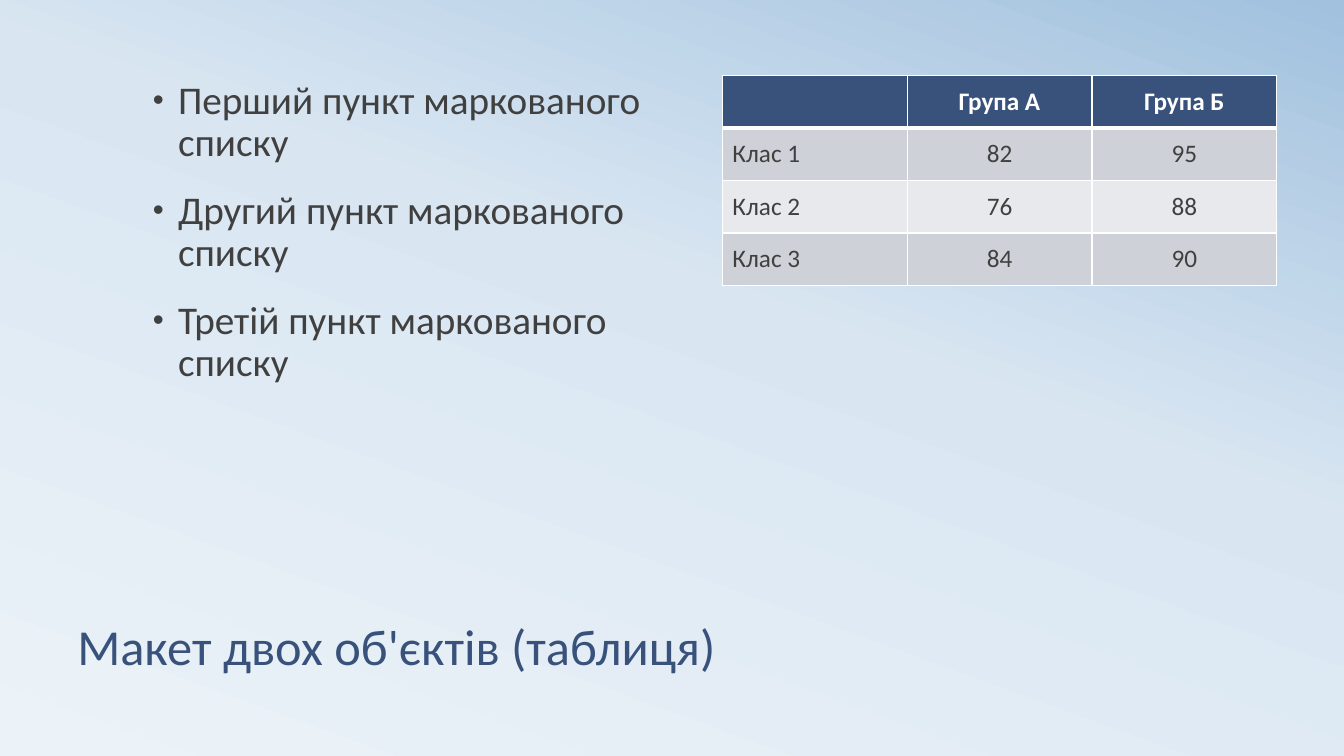
"""Build a slide with a bulleted list, a score table and a title at the bottom."""
from copy import deepcopy
from dataclasses import dataclass
from typing import Any

from lxml.etree import SubElement
from pptx import Presentation
from pptx.dml.color import RGBColor
from pptx.enum.text import MSO_ANCHOR, MSO_AUTO_SIZE, PP_ALIGN
from pptx.oxml.ns import qn
from pptx.util import Emu, Inches, Pt

CELL = Inches(1) // 12
COLUMNS, ROWS = 160, 90


@dataclass(frozen=True)
class Theme:
    font: str = "Calibri"
    accent: str = "39527B"
    ink: str = "404040"
    white: str = "FFFFFF"
    bands: tuple = ("CED1D7", "E8E9EC")
    backdrop: tuple = ((0, "ECF3F8"), (0.58, "D9E6F2"), (1, "A1C1DE"))
    backdrop_angle: int = 70
    title_size: int = 36
    list_size: int = 28
    table_size: int = 18


@dataclass(frozen=True)
class Area:
    column: int
    row: int
    columns: int
    rows: int

    def box(self) -> dict[str, Emu]:
        return {
            "left": Emu(self.column * CELL),
            "top": Emu(self.row * CELL),
            "width": Emu(self.columns * CELL),
            "height": Emu(self.rows * CELL),
        }


THEME = Theme()
TITLE_AREA = Area(8, 67, 144, 14)
LIST_AREA = Area(17, 9, 66, 55)
TABLE_AREA = Area(86, 9, 66, 25)
TITLE = "Макет двох об'єктів (таблиця)"
POINTS = [f"{order} пункт маркованого списку" for order in ("Перший", "Другий", "Третій")]
SCORES = [
    ("", "Група А", "Група Б"),
    ("Клас 1", "82", "95"),
    ("Клас 2", "76", "88"),
    ("Клас 3", "84", "90"),
]


def apply(target: Any, formats: dict[str, Any]) -> None:
    for attribute, value in formats.items():
        setattr(target, attribute, value)


def style_font(font: Any, size: int, color: str, bold: bool = False) -> None:
    apply(font, {"name": THEME.font, "size": Pt(size), "bold": bold})
    font.color.rgb = RGBColor.from_string(color)


def paint_backdrop(slide: Any) -> None:
    fill = slide.background.fill
    fill.gradient()
    fill.gradient_angle = THEME.backdrop_angle
    stop_list = slide.background._cSld.find(".//" + qn("a:gsLst"))
    stop_list.append(deepcopy(stop_list[-1]))
    for stop, (position, color) in zip(fill.gradient_stops, THEME.backdrop):
        stop.color.rgb = RGBColor.from_string(color)
        stop.position = position


def add_bullet(paragraph: Any) -> None:
    properties = paragraph._p.get_or_add_pPr()
    properties.set("marL", str(Inches(0.25)))
    properties.set("indent", str(-Inches(0.25)))
    bullet_color = SubElement(properties, qn("a:buClr"))
    SubElement(bullet_color, qn("a:srgbClr"), val=THEME.ink)
    SubElement(properties, qn("a:buSzPct"), val="80000")
    SubElement(properties, qn("a:buFont"), typeface="Arial")
    SubElement(properties, qn("a:buChar"), char="•")


def fill_placeholder(placeholder: Any, area: Area, lines: list[str], anchor: MSO_ANCHOR,
                     paragraph_format: dict[str, Any], size: int, color: str) -> None:
    apply(placeholder, area.box())
    frame = placeholder.text_frame
    frame.text = "\n".join(lines)
    apply(frame, {"word_wrap": True, "auto_size": MSO_AUTO_SIZE.NONE, "vertical_anchor": anchor})
    for paragraph in frame.paragraphs:
        apply(paragraph, {"alignment": PP_ALIGN.LEFT, **paragraph_format})
        style_font(paragraph.runs[0].font, size, color)


def add_borders(cell: Any, bottom_width: float) -> None:
    properties = cell._tc.get_or_add_tcPr()
    widths = {"L": 1, "R": 1, "T": 1, "B": bottom_width}
    for side, width in widths.items():
        border = SubElement(properties, qn(f"a:ln{side}"), w=str(Pt(width)))
        SubElement(SubElement(border, qn("a:solidFill")), qn("a:srgbClr"), val=THEME.white)


def add_scores(slide: Any) -> None:
    table = slide.shapes.add_table(len(SCORES), len(SCORES[0]), **TABLE_AREA.box()).table
    for row, values in enumerate(SCORES):
        header = row == 0
        shade = THEME.accent if header else THEME.bands[(row - 1) % 2]
        for column, value in enumerate(values):
            cell = table.cell(row, column)
            add_borders(cell, 3 if header else 1)
            cell.fill.solid()
            cell.fill.fore_color.rgb = RGBColor.from_string(shade)
            cell.text = value
            cell.vertical_anchor = MSO_ANCHOR.MIDDLE
            paragraph = cell.text_frame.paragraphs[0]
            paragraph.alignment = PP_ALIGN.CENTER if column else PP_ALIGN.LEFT
            style_font(paragraph.font, THEME.table_size, THEME.ink)
            for run in paragraph.runs:
                style_font(run.font, THEME.table_size,
                           THEME.white if header else THEME.ink, header)


def main() -> None:
    deck = Presentation()
    apply(deck, {"slide_width": Emu(COLUMNS * CELL), "slide_height": Emu(ROWS * CELL)})
    slide = deck.slides.add_slide(deck.slide_layouts[1])
    paint_backdrop(slide)
    fill_placeholder(slide.shapes.title, TITLE_AREA, [TITLE], MSO_ANCHOR.BOTTOM,
                     {"line_spacing": 0.8}, THEME.title_size, THEME.accent)
    points = slide.placeholders[1]
    fill_placeholder(points, LIST_AREA, POINTS, MSO_ANCHOR.TOP,
                     {"line_spacing": 0.9, "space_before": Pt(18)},
                     THEME.list_size, THEME.ink)
    for paragraph in points.text_frame.paragraphs:
        add_bullet(paragraph)
    add_scores(slide)
    deck.save("out.pptx")


if __name__ == "__main__":
    main()
